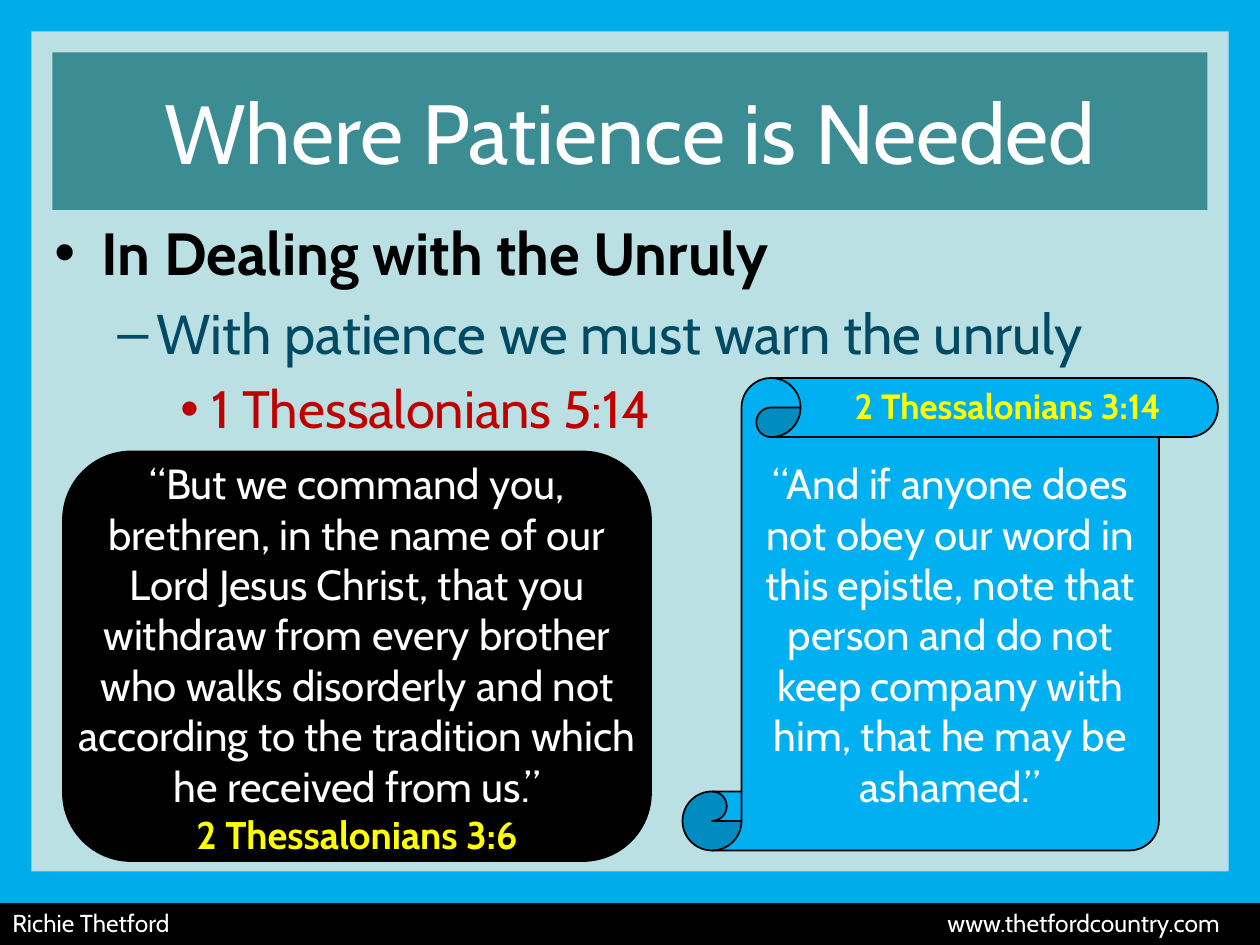
import pptx
import pptx.dml.color
import pptx.enum.shapes
import pptx.enum.text
import pptx.oxml.ns
import pptx.util
from dataclasses import dataclass
from lxml import etree

Pt = pptx.util.Pt
SHAPE = pptx.enum.shapes.MSO_SHAPE
ALIGN = pptx.enum.text.PP_ALIGN
ANCHOR = pptx.enum.text.MSO_ANCHOR


@dataclass(frozen=True)
class Theme:
    font: str = "Cabin"
    # Colours
    background: str = "BBE0E3"
    frame: str = "00ADEA"
    scroll: str = "00B0F0"
    banner: str = "3C8C93"
    black: str = "000000"
    white: str = "FFFFFF"
    yellow: str = "FFFF00"
    blue: str = "004A64"
    red: str = "C00000"
    # Type sizes
    title: int = 48
    levels: tuple = (34, 32, 30)
    quote: int = 24
    reference: int = 22
    scroll_reference: int = 20
    footer: int = 14


THEME = Theme()
WIDTH, HEIGHT = 720, 540
EDGE = 18


def rgb(value):
    return pptx.dml.color.RGBColor.from_string(value)


def add_box(slide, box, fill, kind=SHAPE.RECTANGLE, line=None):
    sp = slide.shapes.add_shape(kind, *map(Pt, box))
    sp.shadow.inherit = False
    sp.fill.solid()
    sp.fill.fore_color.rgb = rgb(fill)
    if line:
        sp.line.color.rgb = rgb(line)
        sp.line.width = Pt(1)
    else:
        sp.line.fill.background()
    return sp


def add_run(p, text, size, color, bold=False):
    r = p.add_run()
    r.text = text
    r.font.name = THEME.font
    r.font.size = Pt(size)
    r.font.bold = bold
    r.font.color.rgb = rgb(color)


def fill_text(sp, lines, align=ALIGN.CENTER, anchor=ANCHOR.TOP):
    """Write one paragraph for each (text, size, color, bold) line."""
    tf = sp.text_frame
    tf.word_wrap = True
    tf.vertical_anchor = anchor
    for i, line in enumerate(lines):
        p = tf.add_paragraph() if i else tf.paragraphs[0]
        p.alignment = align
        add_run(p, *line)
    return tf


def add_text(slide, box, lines, align=ALIGN.CENTER):
    return fill_text(slide.shapes.add_textbox(*map(Pt, box)), lines, align)


def add_child(parent, tag, **attributes):
    child = etree.SubElement(parent, pptx.oxml.ns.qn(tag))
    for key, value in attributes.items():
        child.set(key, str(value))
    return child


def set_bullet(p, level, char, margin, hanging):
    p.level = level
    pPr = p._p.get_or_add_pPr()
    pPr.set("marL", str(Pt(margin)))
    pPr.set("indent", str(-Pt(hanging)))
    add_child(add_child(pPr, "a:spcBef"), "a:spcPct", val=20000)
    add_child(pPr, "a:buFont", typeface="Arial")
    add_child(pPr, "a:buChar", char=char)


def add_outline(slide, box, items):
    lines = [(text, THEME.levels[i], color, i == 0)
             for i, (text, color, *_) in enumerate(items)]
    tf = add_text(slide, box, lines, ALIGN.LEFT)
    for i, (p, item) in enumerate(zip(tf.paragraphs, items)):
        set_bullet(p, i, *item[2:])


def add_footer(slide, text):
    sp = add_box(slide, (0, 515.5, WIDTH, 24.5), THEME.black)
    tf = fill_text(sp, [(text, THEME.footer, THEME.white)], ALIGN.LEFT)
    # The address ends at a right tab stop
    tabs = add_child(tf.paragraphs[0]._p.get_or_add_pPr(), "a:tabLst")
    add_child(tabs, "a:tab", pos=Pt(690), algn="r")


def main():
    prs = pptx.Presentation()
    prs.slide_width, prs.slide_height = Pt(WIDTH), Pt(HEIGHT)
    s = prs.slides.add_slide(prs.slide_layouts[6])
    s.background.fill.solid()
    s.background.fill.fore_color.rgb = rgb(THEME.background)

    # Outline
    add_outline(s, (24, 120, 672, 384), [
        ("In Dealing with the Unruly", THEME.black, "•", 27, 27),
        ("With patience we must warn the unruly", THEME.blue, "–", 58.5, 22.5),
        ("1 Thessalonians 5:14", THEME.red, "•", 90, 18),
    ])

    # Frame and footer
    add_footer(s, "Richie Thetford\twww.thetfordcountry.com")
    for box in ((0, 0, EDGE, 516), (WIDTH - EDGE, 0, EDGE, 516),
                (0, 0, WIDTH, EDGE), (0, 498, WIDTH, EDGE)):
        add_box(s, box, THEME.frame)

    # Command on the left
    add_box(s, (36, 258, 336, 234), THEME.black,
            SHAPE.ROUNDED_RECTANGLE, THEME.black)
    add_text(s, (36, 258, 336, 240), [
        ("“But we command you, brethren, in the name of our Lord Jesus "
         "Christ, that you withdraw from every brother who walks disorderly "
         "and not according to the tradition which he received from us.”",
         THEME.quote, THEME.white),
        ("2 Thessalonians 3:6", THEME.reference, THEME.yellow, True),
    ])

    # Scroll on the right
    add_box(s, (390, 216, 306, 270), THEME.scroll,
            SHAPE.VERTICAL_SCROLL, THEME.black)
    add_text(s, (426, 258, 234, 211), [
        ("“And if anyone does not obey our word in this epistle, note that "
         "person and do not keep company with him, that he may be ashamed.”",
         THEME.quote, THEME.white),
    ])
    add_text(s, (462, 216, 228, 31.5), [
        ("2 Thessalonians 3:14", THEME.scroll_reference, THEME.yellow, True),
    ])

    # Title banner
    title = add_box(s, (30, 30, 660, 90), THEME.banner)
    fill_text(title, [("Where Patience is Needed", THEME.title, THEME.white)],
              anchor=ANCHOR.MIDDLE)

    prs.save("out.pptx")


if __name__ == "__main__":
    main()
